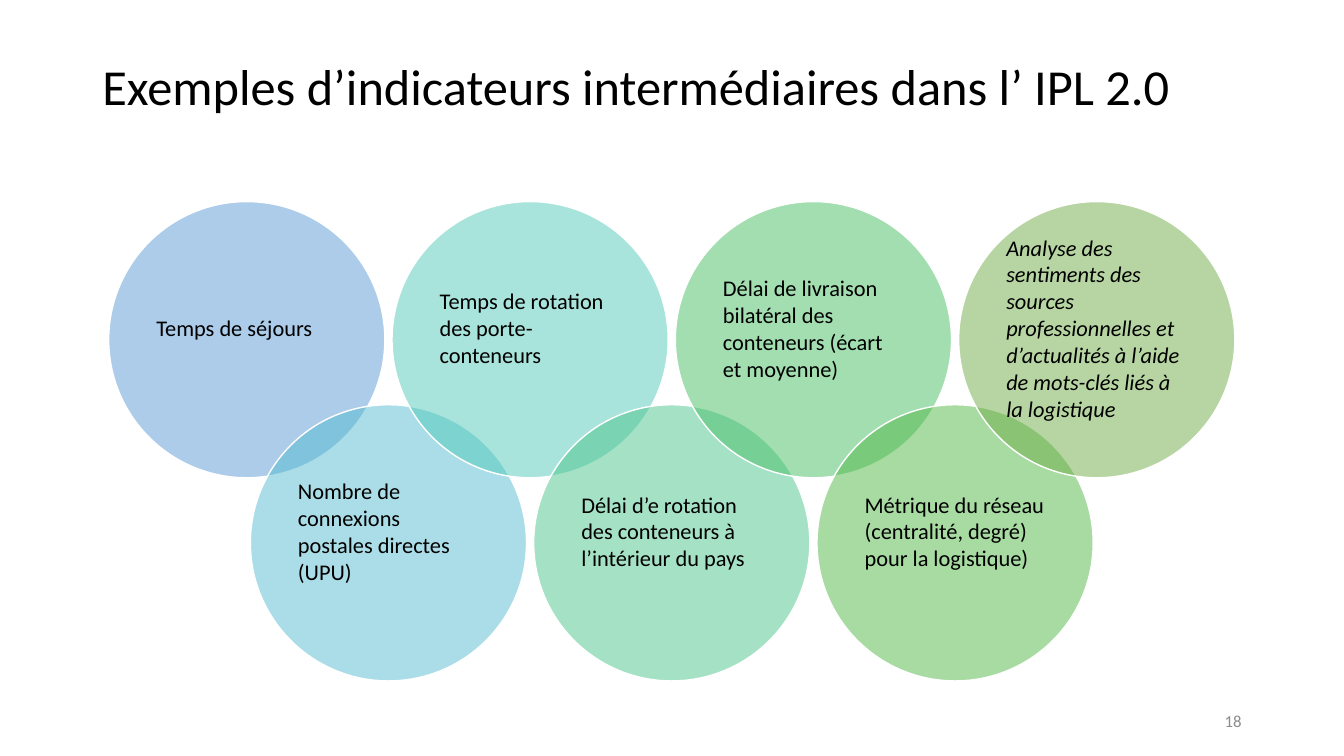
from math import sqrt

from lxml.etree import SubElement
from pptx import Presentation
from pptx.dml.color import RGBColor
from pptx.enum.shapes import MSO_SHAPE
from pptx.enum.text import MSO_ANCHOR, PP_ALIGN
from pptx.oxml.ns import qn
from pptx.util import Cm, Pt

FONT = "Calibri"
TITLE = "Exemples d’indicateurs intermédiaires dans l’ IPL 2.0"
INDICATORS = [
    ("Temps de séjours", "5B9BD5", False),
    ("Nombre de connexions postales directes (UPU)", "56BCD0", False),
    ("Temps de rotation des porte-conteneurs", "52CAB8", False),
    ("Délai d’e rotation des conteneurs à l’intérieur du pays", "4DC58D", False),
    ("Délai de livraison bilatéral des conteneurs (écart et moyenne)", "49BF64", False),
    ("Métrique du réseau (centralité, degré) pour la logistique)", "50B846", False),
    ("Analyse des sentiments des sources professionnelles et d’actualités "
     "à l’aide de mots-clés liés à la logistique", "70AD47", True),
]


def color(value):
    return RGBColor.from_string(value)


def add_text(page, box, text, size, fill="000000", align=PP_ALIGN.LEFT,
             margin=0.25, lift=0, spacing=1.0, italic=False):
    frame = page.shapes.add_textbox(*map(Cm, box)).text_frame
    frame.word_wrap = True
    frame.vertical_anchor = MSO_ANCHOR.MIDDLE
    frame.margin_left = frame.margin_right = Cm(margin)
    frame.margin_top = Cm(min(margin, 0.18))
    frame.margin_bottom = Cm(min(margin, 0.18) + lift)
    para = frame.paragraphs[0]
    para.text = text
    para.alignment = align
    para.line_spacing = spacing
    para.font.name = FONT
    para.font.size = Pt(size)
    para.font.italic = italic
    para.font.color.rgb = color(fill)


def add_circle(page, left, top, diameter, fill):
    circle = page.shapes.add_shape(MSO_SHAPE.OVAL, *map(Cm, (left, top, diameter, diameter)))
    circle.shadow.inherit = False
    circle.fill.solid()
    circle.fill.fore_color.rgb = color(fill)
    shade = circle.fill._xPr.find(qn("a:solidFill"))[0]
    SubElement(shade, qn("a:alpha")).set("val", "50000")
    circle.line.color.rgb = color("FFFFFF")
    circle.line.width = Pt(1)


def add_indicators(page, box):
    left, top, width, height = box
    diameter = 6.96
    step = (width - diameter) / (len(INDICATORS) - 1)
    drop = height - diameter
    side = diameter / sqrt(2)
    inset = (diameter - side) / 2
    for index, (label, fill, italic) in enumerate(INDICATORS):
        x = left + index * step
        y = top + index % 2 * drop
        add_circle(page, x, y, diameter, fill)
        add_text(page, (x + inset, y + inset, side, side), label, 16,
                 margin=0.18, lift=0.6, italic=italic)


def main():
    deck = Presentation()
    deck.slide_width, deck.slide_height = Cm(33.87), Cm(19.05)
    page = deck.slides.add_slide(deck.slide_layouts[6])
    add_text(page, (2.33, 1.01, 29.21, 3.68), TITLE, 36, lift=1.2, spacing=0.9)
    add_indicators(page, (2.74, 5.08, 28.38, 12.08))
    add_text(page, (23.92, 17.66, 7.62, 1.01), "18", 12, "8C8C8C", PP_ALIGN.RIGHT)
    deck.save("out.pptx")


if __name__ == "__main__":
    main()
